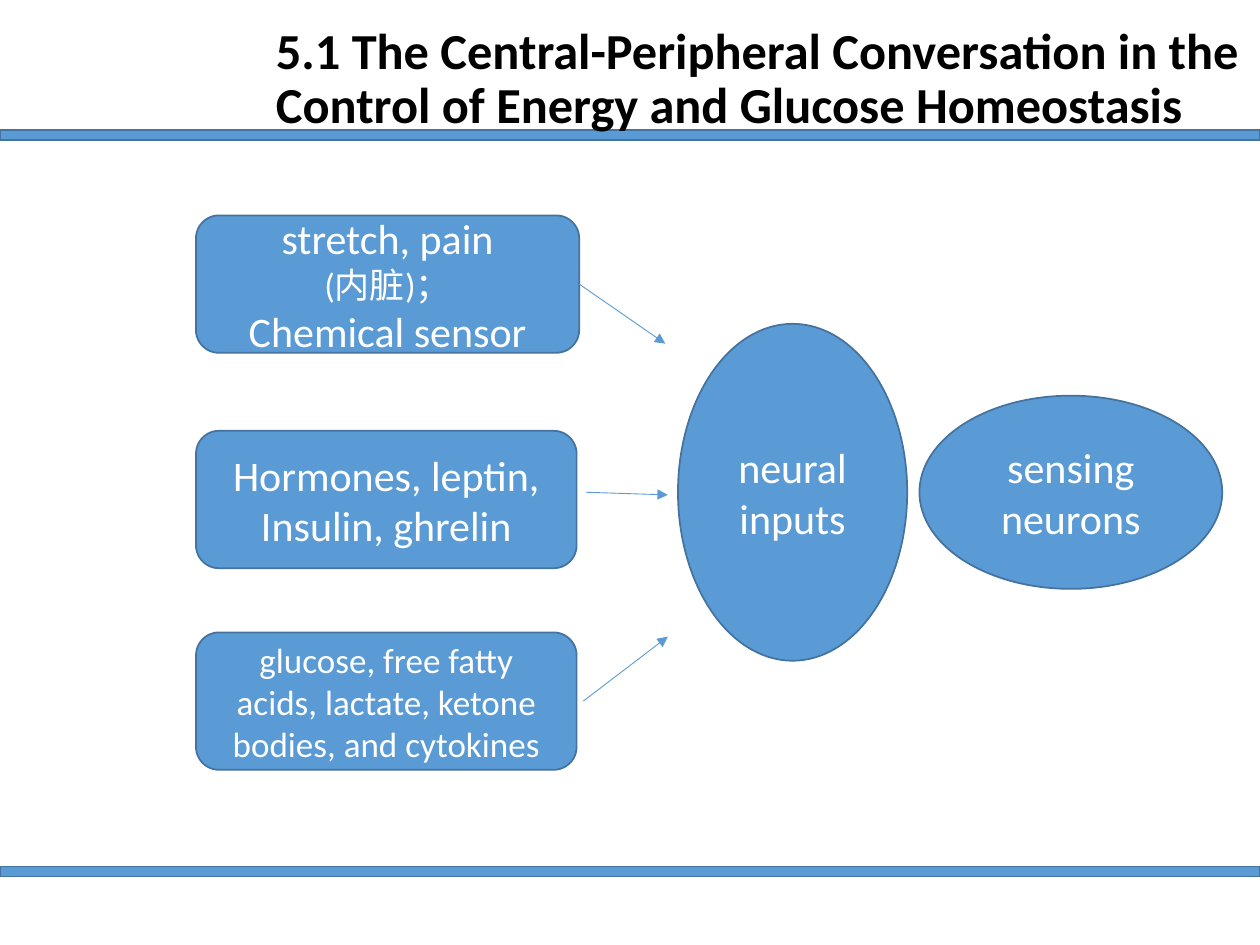
from lxml.etree import SubElement
from pptx import Presentation
from pptx.dml.color import RGBColor
from pptx.enum.shapes import MSO_CONNECTOR, MSO_SHAPE
from pptx.enum.text import MSO_ANCHOR, MSO_AUTO_SIZE, PP_ALIGN
from pptx.oxml.ns import qn
from pptx.util import Pt

FONT = "Calibri"
COLORS = {"fill": "5B9BD5", "outline": "43739E", "title": "000000", "label": "FFFFFF"}
WIDTH, HEIGHT = 720, 540

TITLE = ("5.1 The Central-Peripheral Conversation in the "
         "Control of Energy and Glucose Homeostasis")
TITLE_BOX = (150.5, -6.5, 584, 104.4)
BAR_TOPS, BAR_HEIGHT = (74.2, 495.1), 5.8

# Signal boxes: top, width, paragraphs as (text, size)
BOX_LEFT, BOX_HEIGHT = 112, 78.5
SIGNALS = [
    (123.1, 219, [("stretch, pain", 24), ("(内脏)；", 20), ("Chemical sensor", 24)]),
    (246.2, 217.5, [("Hormones, leptin, Insulin, ghrelin", 24)]),
    (361.4, 217.5, [("glucose, free fatty", 20),
                    ("acids, lactate, ketone bodies, and cytokines", 20)]),
]
# Ellipses: left, width, height, text; all centred on one line
ELLIPSE_MIDDLE = 281.3
ELLIPSES = [
    (387.4, 131, 192.5, "neural inputs"),
    (525.4, 173, 110.4, "sensing neurons"),
]
# Arrows, one per signal box: start, end
ARROWS = [
    ((331, 162.35), (380.2, 196.4)),
    ((334.8, 281.3), (381.6, 282.8)),
    ((333.4, 400.6), (381.6, 363.8)),
]


def color(name):
    return RGBColor.from_string(COLORS[name])


def add_block(slide, kind, left, top, width, height, paragraphs=()):
    shape = slide.shapes.add_shape(kind, Pt(left), Pt(top), Pt(width), Pt(height))
    shape.shadow.inherit = False
    shape.fill.solid()
    shape.fill.fore_color.rgb = color("fill")
    shape.line.color.rgb = color("outline")
    shape.line.width = Pt(1)
    text_frame = shape.text_frame
    text_frame.word_wrap = True
    text_frame.vertical_anchor = MSO_ANCHOR.MIDDLE
    text_frame.text = "\n".join(text for text, _ in paragraphs)
    for paragraph, (_, size) in zip(text_frame.paragraphs, paragraphs):
        paragraph.alignment = PP_ALIGN.CENTER
        for run in paragraph.runs:
            run.font.name = FONT
            run.font.size = Pt(size)
            run.font.color.rgb = color("label")
    return shape


def add_arrow(slide, start, end):
    points = [Pt(value) for value in start + end]
    arrow = slide.shapes.add_connector(MSO_CONNECTOR.STRAIGHT, *points)
    arrow.line.color.rgb = color("fill")
    arrow.line.width = Pt(0.5)
    SubElement(arrow.line._get_or_add_ln(), qn("a:tailEnd"), type="triangle")
    SubElement(arrow.element.spPr, qn("a:effectLst"))
    return arrow


def set_title(title):
    title.left, title.top, title.width, title.height = (Pt(value) for value in TITLE_BOX)
    text_frame = title.text_frame
    text_frame.text = TITLE
    text_frame.word_wrap = True
    text_frame.auto_size = MSO_AUTO_SIZE.NONE
    text_frame.vertical_anchor = MSO_ANCHOR.MIDDLE
    paragraph = text_frame.paragraphs[0]
    paragraph.alignment = PP_ALIGN.LEFT
    paragraph.line_spacing = 0.9
    font = paragraph.runs[0].font
    font.name, font.size, font.bold = FONT, Pt(28.8), True
    font.color.rgb = color("title")


def main():
    presentation = Presentation()
    presentation.slide_width, presentation.slide_height = Pt(WIDTH), Pt(HEIGHT)
    slide = presentation.slides.add_slide(presentation.slide_layouts[5])
    title = slide.shapes.title
    set_title(title)

    for top in BAR_TOPS:
        bar = add_block(slide, MSO_SHAPE.RECTANGLE, 0, top, WIDTH, BAR_HEIGHT)
        title.element.addprevious(bar.element)  # keep the bars behind the title

    boxes = [add_block(slide, MSO_SHAPE.ROUNDED_RECTANGLE, BOX_LEFT, top, width,
                       BOX_HEIGHT, paragraphs)
             for top, width, paragraphs in SIGNALS]
    for left, width, height, text in ELLIPSES:
        add_block(slide, MSO_SHAPE.OVAL, left, ELLIPSE_MIDDLE - height / 2,
                  width, height, [(text, 24)])

    arrows = [add_arrow(slide, start, end) for start, end in ARROWS]
    arrows[0].begin_connect(boxes[0], 3)

    presentation.save("out.pptx")


if __name__ == "__main__":
    main()
